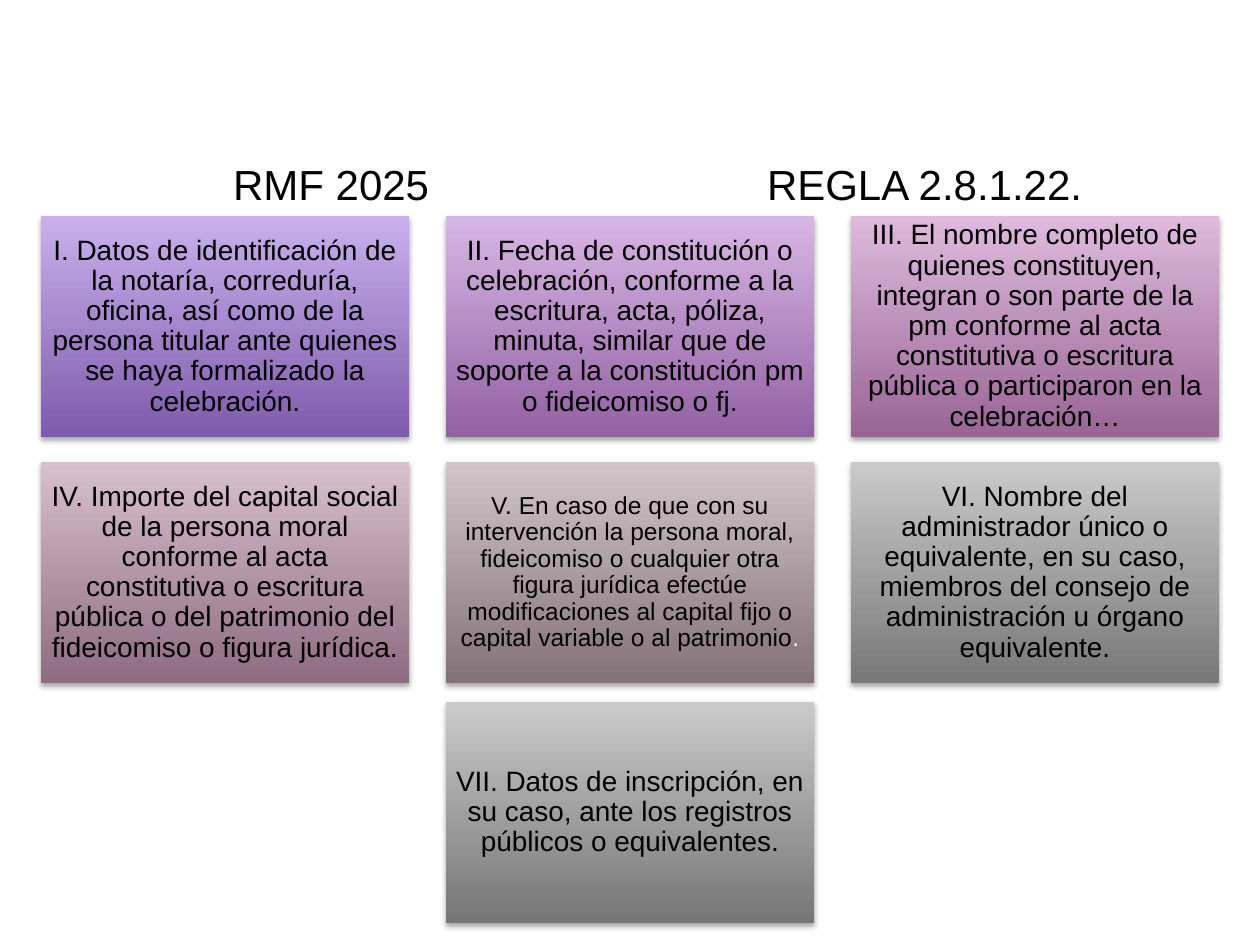
import pptx
import pptx.util
import pptx.dml.color
import pptx.enum.shapes
import pptx.enum.text
import pptx.oxml
import pptx.oxml.ns

SCALE = 914400 / 126
WIDE, HIGH = 368, 221
LEFT, STEP = 41, 405
TOPS = [216, 462, 702]

CARDS = [
    (0, 0, "7F5BAB", "C8B0ED", 16, ["I. Datos de identificación de la notaría, correduría, oficina, así como de la persona titular ante quienes se haya formalizado la celebración."]),
    (0, 1, "9261A2", "D8B6E5", 16, ["II. Fecha de constitución o celebración, conforme a la escritura, acta, póliza, minuta, similar que de soporte a la constitución pm o fideicomiso o fj."]),
    (0, 2, "986595", "DFBADD", 16, ["III. El nombre completo de quienes constituyen, integran o son parte de la pm conforme al acta constitutiva o escritura pública o participaron en la celebración…"]),
    (1, 0, "8E6C81", "D8C0CE", 16, ["IV. Importe del capital social de la persona moral conforme al acta constitutiva o escritura pública o del patrimonio del fideicomiso o figura jurídica."]),
    (1, 1, "837277", "D1C5C9", 14, ["V. En caso de que con su intervención la persona moral, fideicomiso o cualquier otra figura jurídica efectúe modificaciones al capital fijo o capital variable o al patrimonio", "."]),
    (1, 2, "797878", "CBCACA", 16, ["VI. Nombre del administrador único o equivalente, en su caso, miembros del consejo de administración u órgano equivalente."]),
    (2, 1, "767676", "CACACA", 16, ["VII. Datos de inscripción, en su caso, ante los registros públicos o equivalentes."]),
]


def px(size):
    return pptx.util.Emu(round(size * SCALE))


def tint(code):
    return pptx.dml.color.RGBColor.from_string(code)


def style(font, size):
    font.name = "Arial"
    font.size = pptx.util.Pt(size)
    font.color.rgb = tint("000000")


def shade(shape):
    shape.shadow.inherit = False
    effects = shape._element.spPr.find(pptx.oxml.ns.qn("a:effectLst"))
    effects.append(pptx.oxml.parse_xml(
        f'<a:outerShdw {pptx.oxml.ns.nsdecls("a")} blurRad="40000" dist="23000"'
        ' dir="5400000" rotWithShape="0"><a:srgbClr val="000000">'
        '<a:alpha val="35000"/></a:srgbClr></a:outerShdw>'))


def blend(shape, *codes):
    shape.fill.gradient()
    shape.fill.gradient_angle = 90
    for stop, code, place in zip(shape.fill.gradient_stops, codes, (0, 1)):
        stop.color.rgb = tint(code)
        stop.position = place


def card(slide, row, col, dark, light, size, parts):
    shape = slide.shapes.add_shape(
        pptx.enum.shapes.MSO_SHAPE.RECTANGLE,
        px(LEFT + col * STEP), px(TOPS[row]), px(WIDE), px(HIGH))
    blend(shape, dark, light)
    shape.line.fill.background()
    shade(shape)
    frame = shape.text_frame
    frame.word_wrap = True
    frame.vertical_anchor = pptx.enum.text.MSO_ANCHOR.MIDDLE
    frame.margin_left = frame.margin_right = px(8)
    frame.margin_top = frame.margin_bottom = px(8)
    para = frame.paragraphs[0]
    para.alignment = pptx.enum.text.PP_ALIGN.CENTER
    para.line_spacing = 0.9
    style(para.font, size)
    for part in parts:
        run = para.add_run()
        run.text = part
        style(run.font, size)
    if len(parts) > 1:
        run.font.color.rgb = tint("FFFFFF")


def heading(slide):
    title = slide.shapes.title
    title.left, title.top = px(202), px(152)
    title.width, title.height = px(924), px(63)
    frame = title.text_frame
    frame.text = "RMF 2025\tREGLA 2.8.1.22."
    frame.auto_size = pptx.enum.text.MSO_AUTO_SIZE.NONE
    frame.word_wrap = True
    frame.margin_left = px(31)
    para = frame.paragraphs[0]
    para.alignment = pptx.enum.text.PP_ALIGN.LEFT
    para._p.get_or_add_pPr().append(pptx.oxml.parse_xml(
        f'<a:tabLst {pptx.oxml.ns.nsdecls("a")}>'
        f'<a:tab pos="{px(534)}" algn="l"/></a:tabLst>'))
    style(para.font, 24)


def main():
    deck = pptx.Presentation()
    deck.slide_width, deck.slide_height = px(1260), px(945)
    slide = deck.slides.add_slide(deck.slide_layouts[5])
    for item in CARDS:
        card(slide, *item)
    heading(slide)
    deck.save("out.pptx")


if __name__ == "__main__":
    main()
